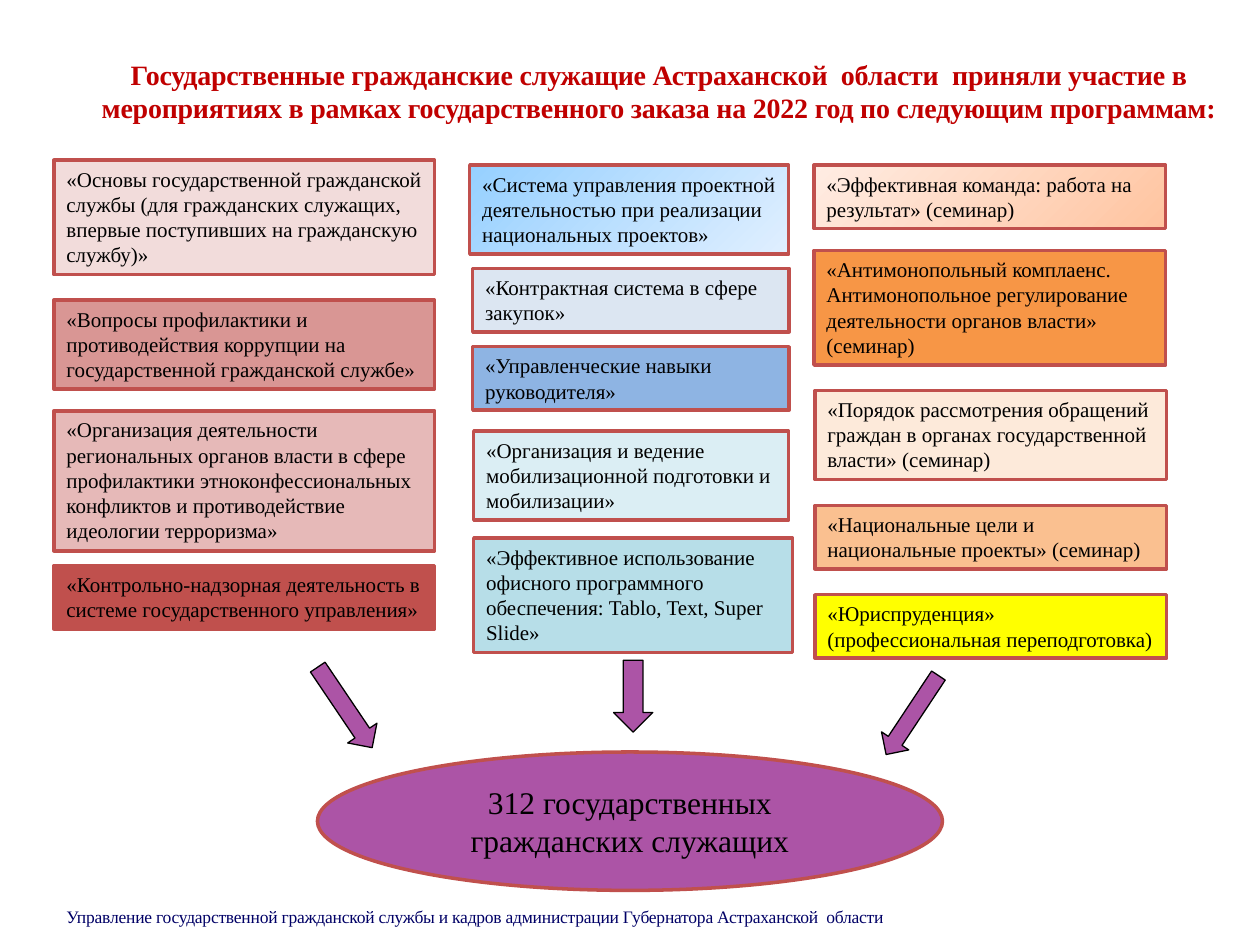
from pptx import Presentation
from pptx.dml.color import RGBColor
from pptx.enum.shapes import MSO_SHAPE
from pptx.enum.text import MSO_ANCHOR, PP_ALIGN
from pptx.util import Cm, Pt

FONT = "Times New Roman"
RED, PURPLE, BLACK = "C0504D", "AC54A6", "000000"

TITLE = ("Государственные гражданские служащие Астраханской  области  приняли участие "
         "в мероприятиях в рамках государственного заказа на 2022 год по следующим программам:")
FOOTER = ("Управление государственной гражданской службы и кадров администрации "
          "Губернатора Астраханской  области")
TOTAL = "312 государственных гражданских служащих"

# Programmes by column: left, top, width (cm), text lines, fill, text
# A fill of three values is a gradient: start, end, angle
PROGRAMMES = [
    # Left column
    (1.09, 3.23, 7.67, 4, "F2DCDB", "«Основы государственной гражданской службы (для гражданских "
     "служащих, впервые поступивших на гражданскую службу)»"),
    (1.09, 6.05, 7.67, 3, "D99694", "«Вопросы профилактики и противодействия коррупции на "
     "государственной гражданской службе»"),
    (1.09, 8.28, 7.67, 5, "E6B9B8", "«Организация деятельности региональных органов власти в сфере "
     "профилактики этноконфессиональных конфликтов и противодействие идеологии терроризма»"),
    (1.09, 11.4, 7.67, 2, "C0504D", "«Контрольно-надзорная деятельность в системе "
     "государственного управления»"),
    # Middle column
    (9.47, 3.33, 6.43, 3, ("96D0FF", "E0EFFF", 315), "«Система управления проектной "
     "деятельностью при реализации национальных проектов»"),
    (9.53, 5.41, 6.38, 2, "DCE6F2", "«Контрактная система в сфере закупок»"),
    (9.53, 6.99, 6.38, 2, "8EB4E3", "«Управленческие навыки руководителя»"),
    (9.55, 8.69, 6.35, 3, "DBEEF4", "«Организация и ведение мобилизационной подготовки "
     "и мобилизации»"),
    (9.55, 10.85, 6.43, 4, "B7DEE8", "«Эффективное использование офисного программного "
     "обеспечения: Tablo, Text, Super Slide»"),
    # Right column
    (16.41, 3.33, 7.09, 2, ("FFC4A0", "FFECE3", 135), "«Эффективная команда: работа на "
     "результат» (семинар)"),
    (16.41, 5.05, 7.09, 4, "F79646", "«Антимонопольный комплаенс. Антимонопольное регулирование "
     "деятельности органов власти» (семинар)"),
    (16.43, 7.87, 7.09, 3, "FDEADA", "«Порядок рассмотрения обращений граждан в органах "
     "государственной власти» (семинар)"),
    (16.43, 10.19, 7.09, 2, "FAC090", "«Национальные цели и национальные проекты» (семинар)"),
    (16.43, 11.99, 7.09, 2, "FFFF00", "«Юриспруденция» (профессиональная переподготовка)"),
]

# Arrows to the total: left, top, width, height (cm), rotation
ARROWS = [
    (6.6, 13.28, 0.71, 1.96, 326),
    (12.37, 13.31, 0.79, 1.45, 0),
    (18.06, 13.46, 0.66, 1.91, 33.5),
]


def rgb(value):
    return RGBColor.from_string(value)


def write(tf, text, size, color, align=PP_ALIGN.LEFT, bold=False, spacing=None):
    tf.word_wrap = True
    p = tf.paragraphs[0]
    r = p.add_run()
    r.text = text
    p.alignment = align
    p.font.name, p.font.size, p.font.bold = FONT, Pt(size), bold
    p.font.color.rgb = rgb(color)
    if spacing:
        r.font._element.set("spc", str(spacing))


def add_shape(kind, box, fill, line, line_width):
    sp = s.shapes.add_shape(kind, *map(Cm, box))
    sp.shadow.inherit = False
    if isinstance(fill, tuple):
        *colors, angle = fill
        sp.fill.gradient()
        sp.fill.gradient_angle = angle
        for stop, color in zip(sp.fill.gradient_stops, colors):
            stop.color.rgb = rgb(color)
    else:
        sp.fill.solid()
        sp.fill.fore_color.rgb = rgb(fill)
    sp.line.color.rgb = rgb(line)
    sp.line.width = Pt(line_width)
    return sp


prs = Presentation()
prs.slide_width, prs.slide_height = Cm(25.4), Cm(19.05)
s = prs.slides.add_slide(prs.slide_layouts[5])

# Title
title = s.shapes.title
title.left, title.top, title.width, title.height = map(Cm, (1.73, 0.33, 23.11, 3))
title.text_frame.vertical_anchor = MSO_ANCHOR.MIDDLE
write(title.text_frame, TITLE, 16, "C00000", PP_ALIGN.CENTER, True, -10)

# Programme boxes, as tall as their text
for left, top, width, lines, fill, text in PROGRAMMES:
    height = 0.25 + 0.515 * lines
    sp = add_shape(MSO_SHAPE.RECTANGLE, (left, top, width, height), fill, RED, 2)
    sp.text_frame.vertical_anchor = MSO_ANCHOR.TOP
    write(sp.text_frame, text, 12, BLACK)

# Arrows and total
for *box, rotation in ARROWS:
    add_shape(MSO_SHAPE.DOWN_ARROW, box, PURPLE, BLACK, 0.75).rotation = rotation
total = add_shape(MSO_SHAPE.OVAL, (6.4, 15.16, 12.6, 2.79), PURPLE, RED, 2)
write(total.text_frame, TOTAL, 18, BLACK, PP_ALIGN.CENTER)

# Footer
footer = s.shapes.add_textbox(*map(Cm, (1.09, 18.14, 17.68, 0.7)))
write(footer.text_frame, FOOTER, 10, "000066", spacing=-10)
footer.text_frame.word_wrap = False

prs.save("out.pptx")
